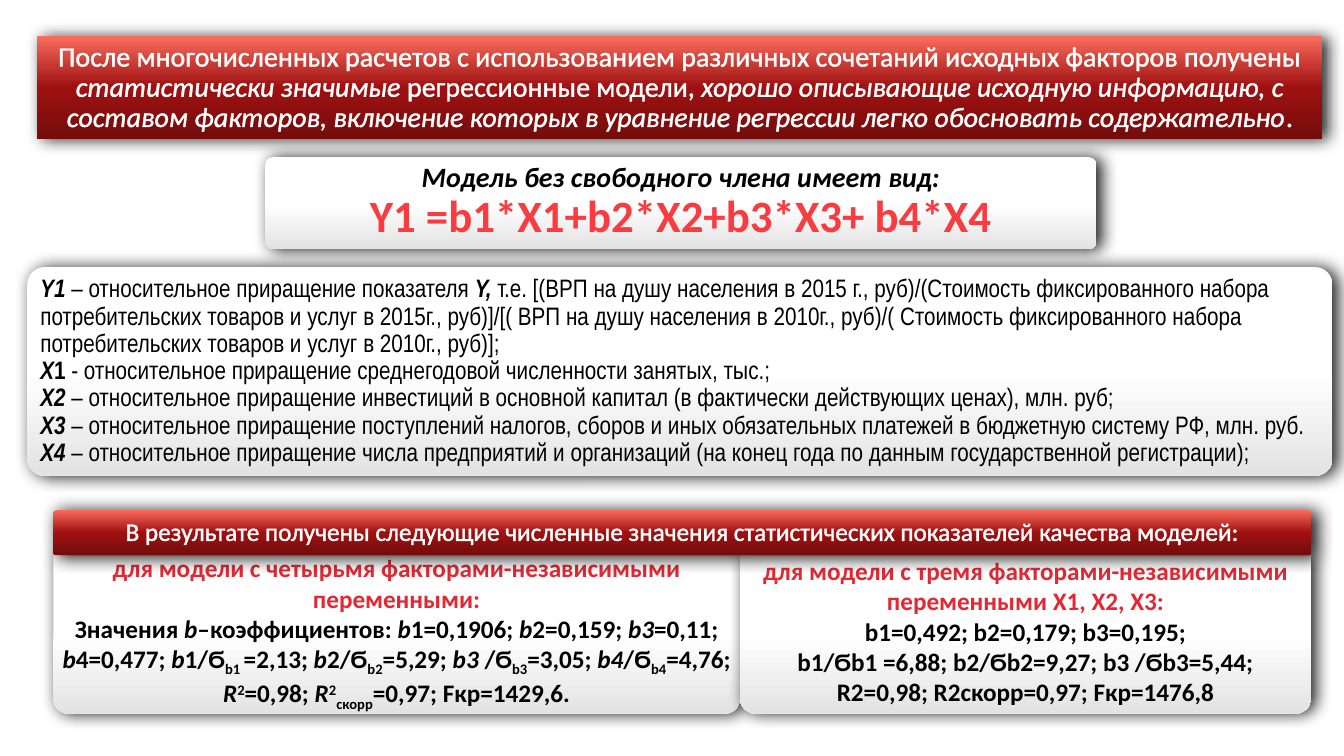
"""Build the slide on regression models and their quality figures."""
from dataclasses import dataclass
from typing import Optional

from pptx import Presentation
from pptx.dml.color import RGBColor
from pptx.enum.shapes import MSO_SHAPE
from pptx.enum.text import MSO_ANCHOR, MSO_AUTO_SIZE, PP_ALIGN
from pptx.oxml import parse_xml
from pptx.oxml.ns import nsdecls
from pptx.util import Pt

WHITE = RGBColor(0xFF, 0xFF, 0xFF)
BLACK = RGBColor(0x00, 0x00, 0x00)
CORAL = RGBColor(0xFA, 0x6C, 0x5C)
RED = RGBColor(0x9F, 0x11, 0x11)
WINE = RGBColor(0x74, 0x0C, 0x0C)
GREY = RGBColor(0xE3, 0xE3, 0xE3)
ROSE = RGBColor(0xFA, 0x3B, 0x40)
CRIMSON = RGBColor(0xE3, 0x28, 0x33)

REDS = (CORAL, RED, WINE)
PALES = (WHITE, WHITE, GREY)
SHIFTS = {"_": "-25000", "^": "30000"}


@dataclass
class Run:
    """Text with flags: b bold, i italic, _ subscript, ^ superscript."""
    text: str
    flags: str = ""


@dataclass
class Para:
    """Runs that share a size, a colour and an outline."""
    runs: list[Run]
    size: float = 18
    color: RGBColor = BLACK
    edge: Optional[RGBColor] = None


@dataclass
class Box:
    """A shaded panel with its text."""
    left: float
    top: float
    width: float
    height: float
    paras: list[Para]
    tones: tuple[RGBColor, ...] = PALES
    face: str = "Calibri"
    align: PP_ALIGN = PP_ALIGN.CENTER
    anchor: MSO_ANCHOR = MSO_ANCHOR.MIDDLE
    inset: float = 5.76
    space: float = 0.9
    curve: Optional[float] = None


def dress(shape, tones: tuple[RGBColor, ...]) -> None:
    """Give a shape its gradient, no line and a soft shadow."""
    stops = "".join(
        f'<a:gs pos="{i * 50000}"><a:srgbClr val="{tone}"/></a:gs>'
        for i, tone in enumerate(tones))
    props = shape._element.spPr
    props.append(parse_xml(
        f'<a:gradFill {nsdecls("a")} rotWithShape="1"><a:gsLst>{stops}</a:gsLst>'
        '<a:lin ang="5400000" scaled="0"/></a:gradFill>'))
    shape.line.fill.background()
    props.append(parse_xml(
        f'<a:effectLst {nsdecls("a")}><a:outerShdw blurRad="{Pt(12)}" '
        f'dist="{Pt(3)}" dir="0" rotWithShape="0"><a:srgbClr val="{BLACK}">'
        '<a:alpha val="87000"/></a:srgbClr></a:outerShdw></a:effectLst>'))


def write(frame, box: Box) -> None:
    """Fill a text frame run by run."""
    frame.word_wrap = True
    frame.auto_size = MSO_AUTO_SIZE.NONE
    frame.vertical_anchor = box.anchor
    frame.margin_left = frame.margin_right = Pt(box.inset)
    frame.margin_top = frame.margin_bottom = Pt(box.inset)
    for i, para in enumerate(box.paras):
        line = frame.add_paragraph() if i else frame.paragraphs[0]
        line.alignment = box.align
        line.line_spacing = box.space
        for part in para.runs:
            run = line.add_run()
            run.text = part.text
            font = run.font
            font.name, font.size = box.face, Pt(para.size)
            font.bold, font.italic = "b" in part.flags, "i" in part.flags
            font.color.rgb = para.color
            props = run._r.get_or_add_rPr()
            for flag, shift in SHIFTS.items():
                if flag in part.flags:
                    props.set("baseline", shift)
            if para.edge is not None:
                props.insert(0, parse_xml(
                    f'<a:ln {nsdecls("a")} w="{Pt(0.75)}"><a:solidFill>'
                    f'<a:srgbClr val="{para.edge}"/></a:solidFill></a:ln>'))


def draw(slide, box: Box) -> None:
    """Add one panel to the slide."""
    kind = MSO_SHAPE.ROUNDED_RECTANGLE
    if box.curve is not None:
        kind = MSO_SHAPE.ROUND_2_SAME_RECTANGLE
    shape = slide.shapes.add_shape(
        kind, Pt(box.left), Pt(box.top), Pt(box.width), Pt(box.height))
    if box.curve is None:
        shape.adjustments[0] = 0.083
    else:
        shape.adjustments[0], shape.adjustments[1] = 0, box.curve
    dress(shape, box.tones)
    write(shape.text_frame, box)


def head(slide, box: Box) -> None:
    """Turn the title placeholder into the top banner."""
    title = slide.shapes.title
    title.left, title.top = Pt(box.left), Pt(box.top)
    title.width, title.height = Pt(box.width), Pt(box.height)
    title._element.spPr.append(parse_xml(
        f'<a:prstGeom {nsdecls("a")} prst="roundRect"><a:avLst>'
        '<a:gd name="adj" fmla="val 8300"/></a:avLst></a:prstGeom>'))
    dress(title, box.tones)
    write(title.text_frame, box)


def term(name: str, flags: str, text: str) -> Para:
    """Make one line that explains a factor."""
    return Para([Run(name, flags), Run(text)])


TITLE = Box(26.64, 25.92, 918, 73.44, [Para([
    Run("После многочисленных расчетов с использованием различных сочетаний исходных факторов получены "),
    Run("статистически значимые", "i"),
    Run(" регрессионные модели,"),
    Run(" хорошо описывающие исходную информацию, с составом факторов, включение которых "
        "в уравнение регрессии легко обосновать содержательно", "i"),
    Run(".")], 20, WHITE, WHITE)], REDS)

MODEL = Box(189.36, 112.32, 594, 65.52, [
    Para([Run("Модель без свободного члена имеет вид:", "bi")], 20),
    Para([Run("Y1 =b1*X1+b2*X2+b3*X3+ b4*X4", "b")], 32, ROSE, WINE)])

TERMS = Box(19.44, 190.8, 932.4, 149.04, [
    Para([
        Run("Y1", "bi"), Run(" – относительное приращение показателя "), Run("Y, ", "bi"),
        Run("т.е. [(ВРП на душу населения в 2015 г., руб)/(Стоимость фиксированного набора "
            "потребительских товаров и услуг в 2015г., руб)]/[( ВРП на душу населения в 2010г., руб)/"
            "( Стоимость фиксированного набора потребительских товаров и услуг в 2010г., руб)];")]),
    Para([Run("X", "bi"), Run("1", "b"),
          Run(" - относительное приращение среднегодовой численности занятых, тыс.;")]),
    term("X2", "bi", " – относительное приращение инвестиций в основной капитал "
         "(в фактически действующих ценах), млн. руб;"),
    term("X3", "bi", " – относительное приращение поступлений налогов, сборов и иных "
         "обязательных платежей в бюджетную систему РФ, млн. руб."),
    term("X4 ", "bi", "– относительное приращение числа предприятий и организаций "
         "(на конец года по данным государственной регистрации);"),
], face="Arial Narrow", align=PP_ALIGN.LEFT)

FOUR = Box(38.16, 396.72, 490.32, 113.04, [
    Para([Run("для модели с четырьмя факторами-независимыми переменными:", "b")], 18, CRIMSON, WINE),
    Para([
        Run("Значения ", "b"), Run("b", "bi"), Run("–коэффициентов: ", "b"),
        Run("b", "bi"), Run("1=0,1906; ", "b"), Run("b", "bi"), Run("2=0,159; ", "b"),
        Run("b3", "bi"), Run("=0,11; ", "b"), Run("b", "bi"), Run("4=0,477; ", "b"),
        Run("b", "bi"), Run("1/Ϭ", "b"), Run("b1 ", "b_"), Run("=2,13; ", "b"),
        Run("b", "bi"), Run("2/Ϭ", "b"), Run("b2", "b_"), Run("=5,29; ", "b"),
        Run("b3 ", "bi"), Run("/Ϭ", "b"), Run("b3", "b_"), Run("=3,05; ", "b"),
        Run("b4", "bi"), Run("/Ϭ", "b"), Run("b4", "b_"), Run("=4,76; ", "b"),
        Run("R", "bi"), Run("2", "b^"), Run("=0,98; ", "b"),
        Run("R", "bi"), Run("2", "b^"), Run("скорр", "b_"), Run("=0,97; Fкр=1429,6.", "b")]),
], inset=0, space=1, curve=0.093)

THREE = Box(528.48, 396.72, 408.24, 113.04, [
    Para([Run("для модели с тремя факторами-независимыми переменными X1, X2, X3:", "b")],
         18, CRIMSON, WINE),
    Para([Run("b1=0,492; b2=0,179; b3=0,195;", "b")]),
    Para([Run("b1/Ϭb1 =6,88; b2/Ϭb2=9,27; b3 /Ϭb3=5,44;", "b")]),
    Para([Run("R2=0,98; R2скорр=0,97; Fкр=1476,8", "b")]),
], anchor=MSO_ANCHOR.TOP, inset=0, space=1, curve=0.099)

RESULT = Box(38.16, 364.32, 898.56, 32.4, [Para([
    Run("В результате получены следующие численные значения статистических "
        "показателей качества моделей:")], 18, WHITE, WHITE)], REDS)


def main() -> None:
    """Build and save the deck."""
    deck = Presentation()
    deck.slide_width, deck.slide_height = Pt(960), Pt(540)
    slide = deck.slides.add_slide(deck.slide_layouts[5])
    head(slide, TITLE)
    for box in (MODEL, TERMS, FOUR, THREE, RESULT):
        draw(slide, box)
    deck.save("out.pptx")


if __name__ == "__main__":
    main()
